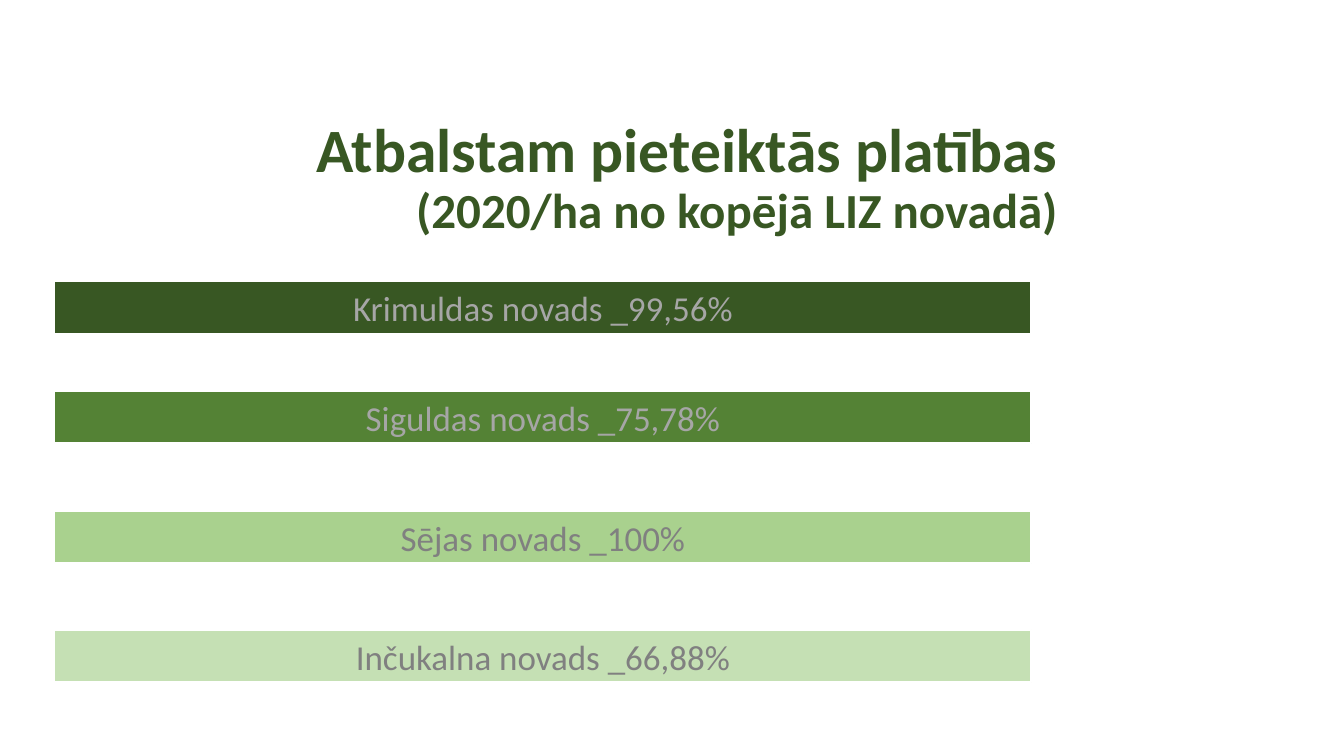
from pptx import Presentation
from pptx.dml.color import RGBColor
from pptx.enum.shapes import MSO_SHAPE
from pptx.enum.text import MSO_ANCHOR, MSO_AUTO_SIZE, PP_ALIGN
from pptx.util import Inches, Pt

COLORS = {
    "forest": "385723",
    "leaf": "548235",
    "sprout": "A9D18E",
    "mint": "C5E0B4",
    "silver": "A6A6A6",
    "gray": "808080",
    "white": "FFFFFF",
}

# District label, top in percent of the slide height, fill and text colour
DISTRICTS = [
    ("Krimuldas novads _99,56%", 37.2, "forest", "silver"),
    ("Siguldas novads _75,78%", 51.73, "leaf", "silver"),
    ("Sējas novads _100%", 67.6, "sprout", "gray"),
    ("Inčukalna novads _66,88%", 83.33, "mint", "gray"),
]
BAR_LEFT, BAR_WIDTH, BAR_HEIGHT = 4.05, 72.68, 6.93


class SlideBuilder:
    """Places elements by percentages of the slide's width and height."""

    font_name = "Calibri"

    def __init__(self, deck):
        self.deck = deck
        self.page = deck.slides.add_slide(deck.slide_layouts[5])

    def color(self, name):
        return RGBColor.from_string(COLORS[name])

    def area(self, left, top, width, height):
        across, down = self.deck.slide_width, self.deck.slide_height
        return [round(share * side / 100) for share, side in
                ((left, across), (top, down), (width, across), (height, down))]

    def style(self, font, size, color, bold=False):
        font.name = self.font_name
        font.size = Pt(size)
        font.bold = bold
        font.color.rgb = self.color(color)

    def title(self, heading, subheading, area):
        box = self.page.shapes.title
        box.left, box.top, box.width, box.height = self.area(*area)
        frame = box.text_frame
        frame.word_wrap = True
        frame.auto_size = MSO_AUTO_SIZE.NONE
        frame.vertical_anchor = MSO_ANCHOR.BOTTOM
        frame.margin_left = frame.margin_right = 0
        frame.margin_top = frame.margin_bottom = 0
        para = frame.paragraphs[0]
        para.alignment = PP_ALIGN.RIGHT
        para.line_spacing = 0.9
        for text, size in ((heading, 44), (subheading, 35)):
            if para.runs:
                para.add_line_break()
            span = para.add_run()
            span.text = text
            self.style(span.font, size, "forest", bold=True)

    def bar(self, label, area, fill, text_color):
        box = self.page.shapes.add_shape(MSO_SHAPE.RECTANGLE, *self.area(*area))
        box.shadow.inherit = False
        box.fill.solid()
        box.fill.fore_color.rgb = self.color(fill)
        box.line.color.rgb = self.color("white")
        box.line.width = Pt(1.5)
        frame = box.text_frame
        frame.word_wrap = True
        frame.vertical_anchor = MSO_ANCHOR.MIDDLE
        para = frame.paragraphs[0]
        para.text = label
        para.alignment = PP_ALIGN.CENTER
        self.style(para.font, 25, text_color)


def main():
    deck = Presentation()
    deck.slide_width, deck.slide_height = Inches(13.33), Inches(7.5)
    builder = SlideBuilder(deck)
    builder.title("Atbalstam pieteiktās platības", "(2020/ha no kopējā LIZ novadā)",
                  (20.85, 15.6, 57.9, 16))
    for label, top, fill, text_color in DISTRICTS:
        builder.bar(label, (BAR_LEFT, top, BAR_WIDTH, BAR_HEIGHT), fill, text_color)
    deck.save("out.pptx")


if __name__ == "__main__":
    main()
